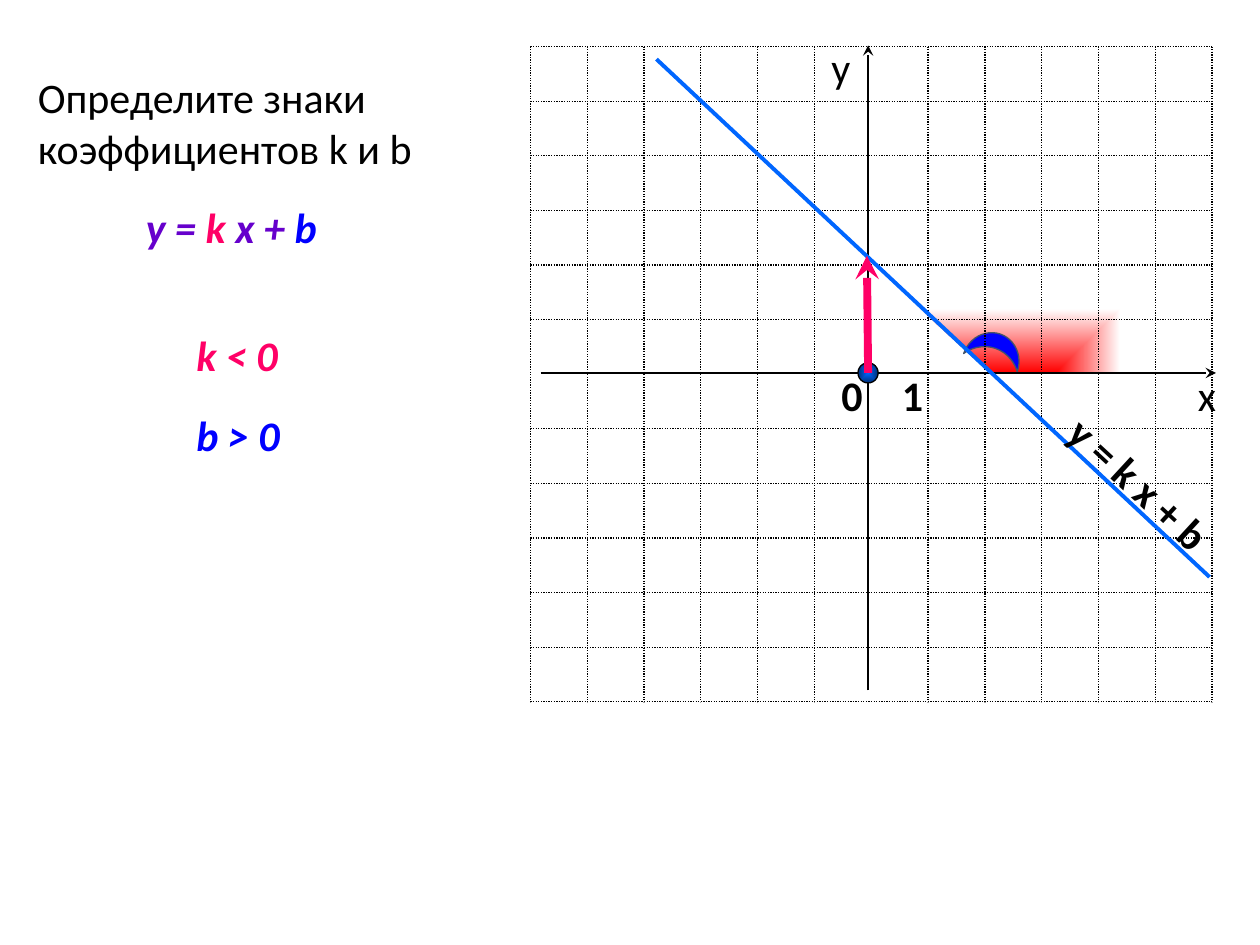
from dataclasses import dataclass

from lxml.etree import SubElement
from pptx import Presentation
from pptx.dml.color import RGBColor as RGB
from pptx.enum.dml import MSO_LINE
from pptx.enum.shapes import MSO_CONNECTOR, MSO_SHAPE
from pptx.enum.text import MSO_ANCHOR, MSO_AUTO_SIZE, PP_ALIGN
from pptx.oxml.ns import qn
from pptx.util import Inches, Pt


@dataclass(frozen=True)
class Theme:
    font: str = "Calibri"
    size: int = 24
    black: str = "000000"
    white: str = "FFFFFF"
    purple: str = "6600CC"
    pink: str = "FF0066"
    blue: str = "0000FF"
    graph: str = "0066FF"
    navy: str = "002F76"
    red: str = "FF0000"
    slate: str = "44546A"
    thin: float = 0.75
    axis: float = 1.5
    graph_width: float = 2.25
    arrow: float = 4.5


THEME = Theme()


def rgb(color):
    return RGB.from_string(color)


def place(shape, box):
    shape.left, shape.top, shape.width, shape.height = map(Inches, box)


def format_run(run, color, bold=False, italic=False):
    font = run.font
    font.name, font.size = THEME.font, Pt(THEME.size)
    font.bold, font.italic = bold, italic
    font.color.rgb = rgb(color)


def add_label(slide, box, parts, bold=False, italic=False, wrap=True, tab=None):
    label = slide.shapes.add_textbox(*map(Inches, box))
    label.text_frame.word_wrap = wrap
    paragraph = label.text_frame.paragraphs[0]
    if tab:
        stops = SubElement(paragraph._p.get_or_add_pPr(), qn("a:tabLst"))
        SubElement(stops, qn("a:tab"), pos=str(Inches(tab)), algn="l")
    for text, color in parts:
        run = paragraph.add_run()
        run.text = text
        format_run(run, color, bold, italic)
    return label


def add_line(slide, start, end, color, width, dotted=False, arrow=False):
    points = map(Inches, (*start, *end))
    line = slide.shapes.add_connector(MSO_CONNECTOR.STRAIGHT, *points)
    line.line.color.rgb = rgb(color)
    line.line.width = Pt(width)
    if dotted:
        line.line.dash_style = MSO_LINE.ROUND_DOT
    properties = line._element.spPr
    if arrow:
        SubElement(properties.find(qn("a:ln")), qn("a:tailEnd"), type="stealth")
    SubElement(properties, qn("a:effectLst"))


def fill_path_gradient(shape, first, last, path, center):
    shape.fill.gradient()
    for stop, color in zip(shape.fill.gradient_stops, (first, last)):
        stop.color.rgb = rgb(color)
    gradient = shape._element.spPr.find(qn("a:gradFill"))
    gradient.remove(gradient.find(qn("a:lin")))
    shade = SubElement(gradient, qn("a:path"), path=path)
    edges = {side: str(share * 1000) for side, share in zip("ltrb", center)}
    SubElement(shade, qn("a:fillToRect"), **edges)


def add_angle(slide, box):
    left, top, width, height = box
    outline = [(0.22, 0.99), (1, 1), (0.66, 0.96), (0.56, 0.62),
               (0.43, 0.24), (0.19, 0), (0.09, 0.16), (0, 0.27)]
    points = [(Inches(left + x * width), Inches(top + y * height)) for x, y in outline]
    builder = slide.shapes.build_freeform(*points[0], scale=1.0)
    builder.add_line_segments(points[1:], close=True)
    sector = builder.convert_to_shape()
    sector.shadow.inherit = False
    sector.line.fill.background()
    fill_path_gradient(sector, THEME.red, THEME.white, "rect", (0, 100, 100, 0))

    arc = slide.shapes.add_shape(
        MSO_SHAPE.MOON, *map(Inches, (left + 0.74, top + 0.6, 0.24, 0.45)))
    arc.rotation = 108.9
    arc.shadow.inherit = False
    arc.fill.solid()
    arc.fill.fore_color.rgb = rgb(THEME.blue)
    arc.line.color.rgb = rgb(THEME.slate)
    arc.line.width = Pt(THEME.thin)


def add_grid(slide, box, cells=12):
    left, top, width, height = box
    for step in range(cells + 1):
        if step == cells // 2:
            continue
        x, y = left + step * width / cells, top + step * height / cells
        for start, end in (((x, top), (x, top + height)), ((left, y), (left + width, y))):
            add_line(slide, start, end, THEME.black, THEME.thin, dotted=True)


def add_axes(slide, box, origin):
    left, top, width, height = box
    x, y = origin
    add_line(slide, (left, y), (left + width, y), THEME.black, THEME.axis, arrow=True)
    add_line(slide, (x, top + height), (x, top), THEME.black, THEME.axis, arrow=True)
    axis_names = (("х", left + width - 0.24, y - 0.08), ("у", x - 0.39, top - 0.08))
    for name, label_left, label_top in axis_names:
        add_label(slide, (label_left, label_top, 0.37, 0.5),
                  [(name, THEME.black)], wrap=False)


def add_intercept(slide, origin, height):
    x, y = origin
    dot = slide.shapes.add_shape(
        MSO_SHAPE.FLOWCHART_CONNECTOR, *map(Inches, (x - 0.08, y - 0.08, 0.16, 0.16)))
    dot.shadow.inherit = False
    fill_path_gradient(dot, THEME.graph, THEME.navy, "shape", (50, 50, 50, 50))
    dot.line.color.rgb = rgb(THEME.black)
    dot.line.width = Pt(THEME.thin)
    add_line(slide, origin, (x - 0.01, y - height), THEME.pink, THEME.arrow, arrow=True)


def add_plot(slide, box):
    left, top, width, height = box
    origin = (left + 2.68, top + 2.59)
    add_angle(slide, (left + 2.83, top + 1.57, 3.7, 1.02))
    add_axes(slide, (left + 0.08, top - 0.01, 5.36, 5.12), origin)
    add_grid(slide, box)
    add_line(slide, (left + 1, top + 0.1), (left + 5.39, top + 4.21),
             THEME.graph, THEME.graph_width)
    add_intercept(slide, origin, 0.93)
    equation = add_label(slide, (left + 4.02, top + 3.3, 1.81, 0.5),
                         [("y = k x + b", THEME.black)], bold=True)
    equation.rotation = 42.7
    add_label(slide, (left + 2.37, top + 2.51, 1.26, 0.5),
              [("0\t1", THEME.black)], bold=True, tab=0.48)


def add_task(slide, box):
    title = slide.shapes.title
    place(title, box)
    frame = title.text_frame
    frame.text = "Определите знаки\nкоэффициентов k и b"
    frame.word_wrap = True
    frame.auto_size = MSO_AUTO_SIZE.NONE
    frame.vertical_anchor = MSO_ANCHOR.TOP
    for paragraph in frame.paragraphs:
        paragraph.alignment = PP_ALIGN.LEFT
        for run in paragraph.runs:
            format_run(run, THEME.black)


def add_answers(slide, box):
    left, top, width, _ = box
    formula = [("y = ", THEME.purple), ("k ", THEME.pink),
               ("x + ", THEME.purple), ("b", THEME.blue)]
    add_label(slide, (left, top, width, 0.5), formula, bold=True, italic=True)
    signs = (("k < 0", THEME.pink, 1.02), ("b > 0", THEME.blue, 1.65))
    for sign, color, offset in signs:
        add_label(slide, (left + 0.4, top + offset, 0.97, 0.5),
                  [(sign, color)], bold=True, italic=True)


def main():
    deck = Presentation()
    deck.slide_width, deck.slide_height = Inches(10), Inches(7.5)
    slide = deck.slides.add_slide(deck.slide_layouts[5])
    add_plot(slide, (4.21, 0.37, 5.41, 5.2))
    add_task(slide, (0.2, 0.52, 3.51, 0.9))
    add_answers(slide, (1.06, 1.55, 1.81, 2.15))
    deck.save("out.pptx")


if __name__ == "__main__":
    main()
